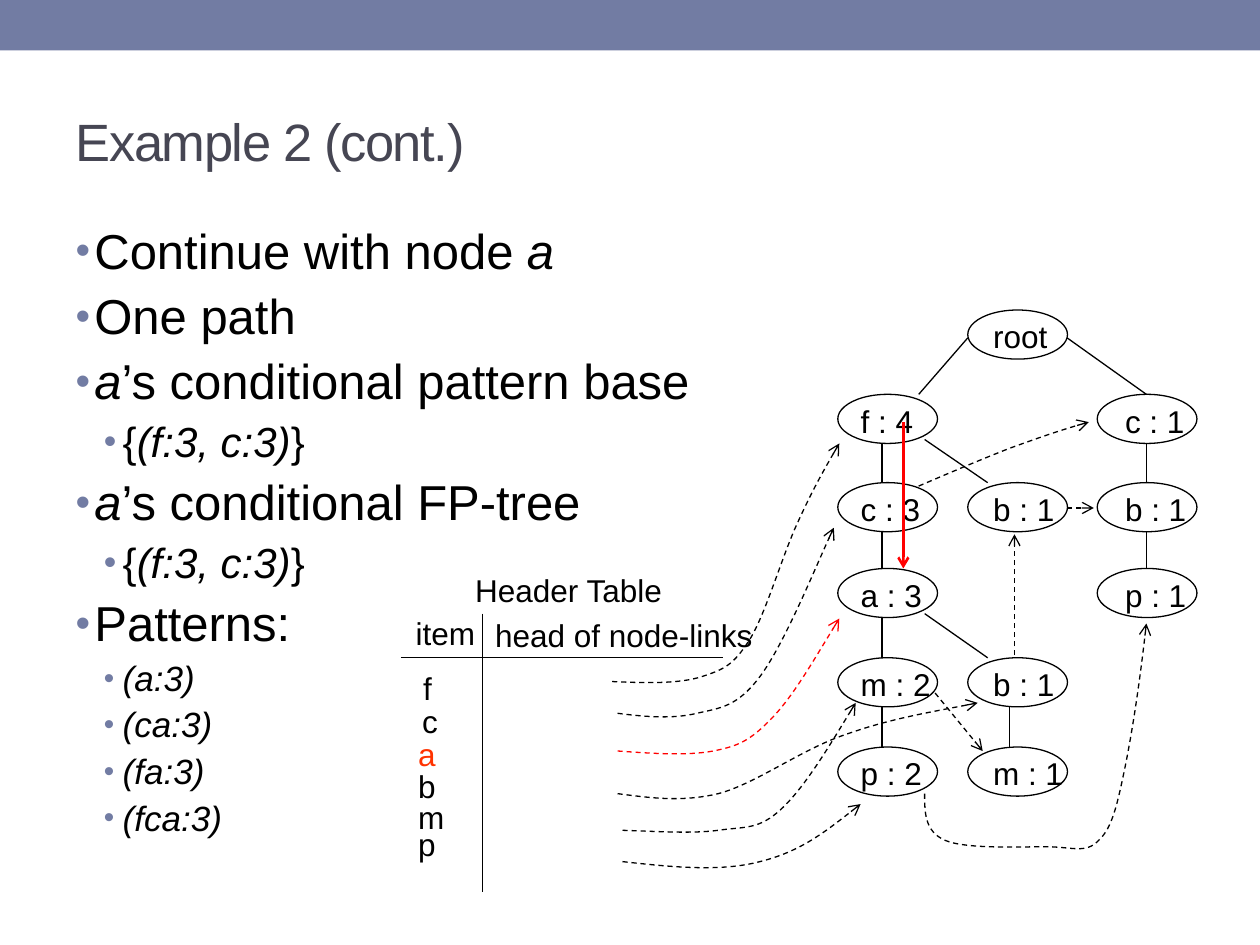
"""Builds the slide on mining the FP-tree conditional pattern base of node a."""
import pptx
import pptx.dml.color
import pptx.enum.dml
import pptx.enum.shapes
import pptx.enum.text
import pptx.oxml.ns
import pptx.util
from lxml import etree

Cm, Pt = pptx.util.Cm, pptx.util.Pt
RGBColor = pptx.dml.color.RGBColor
SHAPES = pptx.enum.shapes.MSO_SHAPE
qn = pptx.oxml.ns.qn

SLATE = RGBColor(0x72, 0x7C, 0xA3)
TITLE_GREY = RGBColor(0x46, 0x46, 0x53)
BLACK = RGBColor(0, 0, 0)
RED = RGBColor(0xFF, 0, 0)
ORANGE_RED = RGBColor(0xFF, 0x33, 0)

TITLE = "Example 2 (cont.)"
OUTLINE = [
    (0, 28, [("Continue with node ", False), ("a", True)]),
    (0, 28, [("One path", False)]),
    (0, 28, [("a", True), ("’s conditional pattern base", False)]),
    (1, 24, [("{", False), ("(f:3, c:3)", True), ("}", False)]),
    (0, 28, [("a", True), ("’s conditional FP-tree", False)]),
    (1, 24, [("{", False), ("(f:3, c:3)", True), ("}", False)]),
    (0, 28, [("Patterns:", False)]),
] + [(1, 20, [(pattern, True)]) for pattern in ("(a:3)", "(ca:3)", "(fa:3)", "(fca:3)")]

HEADER_LABELS = [
    ("Header Table", 9.58, 11.51, 4.2, BLACK),
    ("item", 8.38, 12.37, 1.3, BLACK),
    ("head of node-links", 9.98, 12.42, 5.6, BLACK),
    ("f", 8.53, 13.49, 0.6, BLACK),
    ("c", 8.51, 14.15, 0.6, BLACK),
    ("a", 8.43, 14.81, 0.6, ORANGE_RED),
    ("b", 8.43, 15.47, 0.6, BLACK),
    ("m", 8.43, 16.08, 0.6, BLACK),
    ("p", 8.43, 16.64, 0.6, BLACK),
]
HEADER_RULES = [((8.08, 13.26), (14.58, 13.26)), ((9.73, 12.37), (9.73, 17.98))]

COLUMNS = [16.89, 19.51, 22.12]
LABEL_INDENTS = [0.46, 0.51, 0.56]
ROWS = [6.25, 7.95, 9.73, 11.46, 13.26, 15.06]
NODE_WIDTH, NODE_HEIGHT = 2.01, 0.99
NODES = [
    ("root", 1, 0), ("f : 4", 0, 1), ("c : 3", 0, 2), ("a : 3", 0, 3),
    ("m : 2", 0, 4), ("p : 2", 0, 5), ("b : 1", 1, 2), ("b : 1", 1, 4),
    ("m : 1", 1, 5), ("c : 1", 2, 1), ("b : 1", 2, 2), ("p : 1", 2, 3),
]
VERTICAL_EDGES = [(17.78, range(1, 5)), (20.35, range(4, 5)), (23.11, range(1, 3))]
BRANCHES = [
    ((21.51, 6.81), (23.11, 7.95)), ((19.51, 6.81), (18.52, 7.95)),
    ((18.64, 8.86), (19.91, 9.73)), ((18.64, 12.37), (19.91, 13.26)),
]
STRAIGHT_LINKS = [
    ((18.85, 13.97), (19.81, 15.14)),
    ((20.45, 13.21), (20.45, 10.77)),
    ((21.51, 10.24), (22.05, 10.24)),
]
PREFIX_PATH = ((18.21, 8.51), (18.21, 11.46))
CURVED_LINKS = [
    (BLACK, [(12.34, 13.74), (13, 13.77), (13.69, 13.79), (14.15, 13.64), (14.61, 13.49),
             (14.78, 13.41), (15.11, 12.9), (15.44, 12.37), (15.77, 11.2), (16.08, 10.54),
             (16.38, 9.88), (16.64, 9.42), (16.92, 8.94)]),
    (BLACK, [(12.45, 14.38), (13, 14.45), (13.56, 14.5), (14.05, 14.38), (14.53, 14.27),
             (14.86, 14.25), (15.32, 13.64), (15.8, 13), (16.56, 11.15), (16.81, 10.64)]),
    (RED, [(12.45, 15.14), (13.16, 15.19), (13.84, 15.24), (14.38, 15.14), (14.88, 15.04),
           (15.11, 14.94), (15.54, 14.5), (15.98, 14.05), (16.43, 13.26), (16.92, 12.47)]),
    (BLACK, [(12.45, 16), (13.08, 16.08), (13.72, 16.18), (14.48, 16), (15.24, 15.8),
             (16.15, 15.11), (17.04, 14.81), (17.91, 14.5), (18.8, 14.35), (19.71, 14.17)]),
    (BLACK, [(12.55, 16.74), (13.26, 16.76), (13.94, 16.81), (14.48, 16.74), (15.01, 16.66),
             (15.29, 16.74), (15.75, 16.31), (16.21, 15.88), (16.74, 15.01), (17.25, 14.17)]),
    (BLACK, [(12.55, 17.37), (13.54, 17.48), (14.53, 17.58), (15.32, 17.37), (16.13, 17.17),
             (16.74, 16.69), (17.35, 16.21)]),
    (BLACK, [(18.52, 9.8), (19.15, 9.53), (19.76, 9.27), (20.35, 9.04), (20.9, 8.84),
             (21.41, 8.66), (21.95, 8.51)]),
    (BLACK, [(18.64, 16), (18.64, 16.38), (18.64, 16.76), (19.05, 16.94), (19.46, 17.12),
             (20.57, 17.07), (21.08, 17.07), (21.62, 17.07), (21.89, 17.22), (22.15, 16.94),
             (22.43, 16.69), (22.53, 16.18), (22.68, 15.47), (22.83, 14.73), (22.99, 13.67),
             (23.11, 12.57)]),
]


def apply(target, values):
    for name, value in values.items():
        setattr(target, name, value)


def write(paragraph, text, size, color=BLACK, italic=False):
    run = paragraph.add_run()
    run.text = text
    apply(run.font, {"name": "Arial", "size": Pt(size), "italic": italic})
    run.font.color.rgb = color
    return run


def stroke(line, color=BLACK, width=0.75, dashed=False, arrow=False):
    line.color.rgb = color
    line.width = Pt(width)
    if dashed:
        line.dash_style = pptx.enum.dml.MSO_LINE.DASH
    if arrow:
        etree.SubElement(line._get_or_add_ln(), qn("a:tailEnd"), type="arrow")


def draw_line(shapes, ends, **look):
    (x1, y1), (x2, y2) = ends
    connector = shapes.add_connector(
        pptx.enum.shapes.MSO_CONNECTOR.STRAIGHT, Cm(x1), Cm(y1), Cm(x2), Cm(y2))
    stroke(connector.line, **look)
    etree.SubElement(connector._element.spPr, qn("a:effectLst"))


def draw_curve(shapes, points, color):
    start, *controls = [(Cm(x), Cm(y)) for x, y in points]
    builder = shapes.build_freeform(*start)
    builder.add_line_segments(controls, close=False)
    curve = builder.convert_to_shape()
    segments = list(curve._element.iter(qn("a:lnTo")))
    for first in range(0, len(segments), 3):
        bezier = etree.Element(qn("a:cubicBezTo"))
        segments[first].addprevious(bezier)
        for segment in segments[first:first + 3]:
            bezier.append(segment[0])
            segment.getparent().remove(segment)
    curve.fill.background()
    curve.shadow.inherit = False
    stroke(curve.line, color, dashed=True, arrow=True)


def add_label(shapes, text, left, top, width, color=BLACK):
    frame = shapes.add_textbox(Cm(left), Cm(top), Cm(width), Cm(0.76)).text_frame
    apply(frame, dict.fromkeys(
        ("margin_left", "margin_top", "margin_right", "margin_bottom"), 0))
    frame.word_wrap = True
    write(frame.paragraphs[0], text, 18, color)


def add_bullet(paragraph, level):
    properties = paragraph._p.get_or_add_pPr()
    properties.set("marL", str(Cm((0.38, 0.95)[level])))
    properties.set("indent", str(Cm(-0.38)))
    color = etree.SubElement(properties, qn("a:buClr"))
    etree.SubElement(color, qn("a:srgbClr"), val=str(SLATE))
    etree.SubElement(properties, qn("a:buSzPct"), val="85000")
    etree.SubElement(properties, qn("a:buFont"), typeface="Arial")
    etree.SubElement(properties, qn("a:buChar"), char="•")


def add_outline(body):
    apply(body, {"left": Cm(1.27), "top": Cm(4.45), "width": Cm(22.86), "height": Cm(13.54)})
    frame = body.text_frame
    frame.auto_size = pptx.enum.text.MSO_AUTO_SIZE.NONE
    for index, (level, size, runs) in enumerate(OUTLINE):
        paragraph = frame.add_paragraph() if index else frame.paragraphs[0]
        apply(paragraph, {"level": level, "line_spacing": 0.9, "space_after": Pt(0),
                          "space_before": Pt(size * 0.25 if index else 0)})
        add_bullet(paragraph, level)
        for text, italic in runs:
            write(paragraph, text, size, italic=italic)


def add_title(title):
    apply(title, {"left": Cm(1.27), "top": Cm(1.47), "width": Cm(22.86), "height": Cm(2.74)})
    title.text_frame.vertical_anchor = pptx.enum.text.MSO_ANCHOR.MIDDLE
    heading = title.text_frame.paragraphs[0]
    heading.alignment = pptx.enum.text.PP_ALIGN.LEFT
    write(heading, TITLE, 30, TITLE_GREY).font._element.set("spc", "-80")


def main():
    deck = pptx.Presentation()
    apply(deck, {"slide_width": Cm(25.4), "slide_height": Cm(19.05)})
    slide = deck.slides.add_slide(deck.slide_layouts[1])
    shapes = slide.shapes
    band = shapes.add_shape(SHAPES.RECTANGLE, 0, 0, deck.slide_width, Cm(1.02))
    band.fill.solid()
    band.fill.fore_color.rgb = SLATE
    band.line.fill.background()
    band.shadow.inherit = False
    add_title(shapes.title)
    add_outline(slide.placeholders[1])

    for label in HEADER_LABELS:
        add_label(shapes, *label)
    tree_edges = [((x, ROWS[row] + NODE_HEIGHT), (x, ROWS[row + 1]))
                  for x, rows in VERTICAL_EDGES for row in rows]
    for ends in HEADER_RULES + tree_edges + BRANCHES:
        draw_line(shapes, ends)
    for text, column, row in NODES:
        left, top = COLUMNS[column], ROWS[row]
        node = shapes.add_shape(
            SHAPES.OVAL, Cm(left), Cm(top), Cm(NODE_WIDTH), Cm(NODE_HEIGHT))
        node.fill.background()
        node.shadow.inherit = False
        stroke(node.line)
        add_label(shapes, text, left + LABEL_INDENTS[column], top + 0.15, 1.8)
    for color, points in CURVED_LINKS:
        draw_curve(shapes, points, color)
    for ends in STRAIGHT_LINKS:
        draw_line(shapes, ends, dashed=True, arrow=True)
    draw_line(shapes, PREFIX_PATH, color=RED, width=1.5, arrow=True)
    deck.save("out.pptx")


if __name__ == "__main__":
    main()
